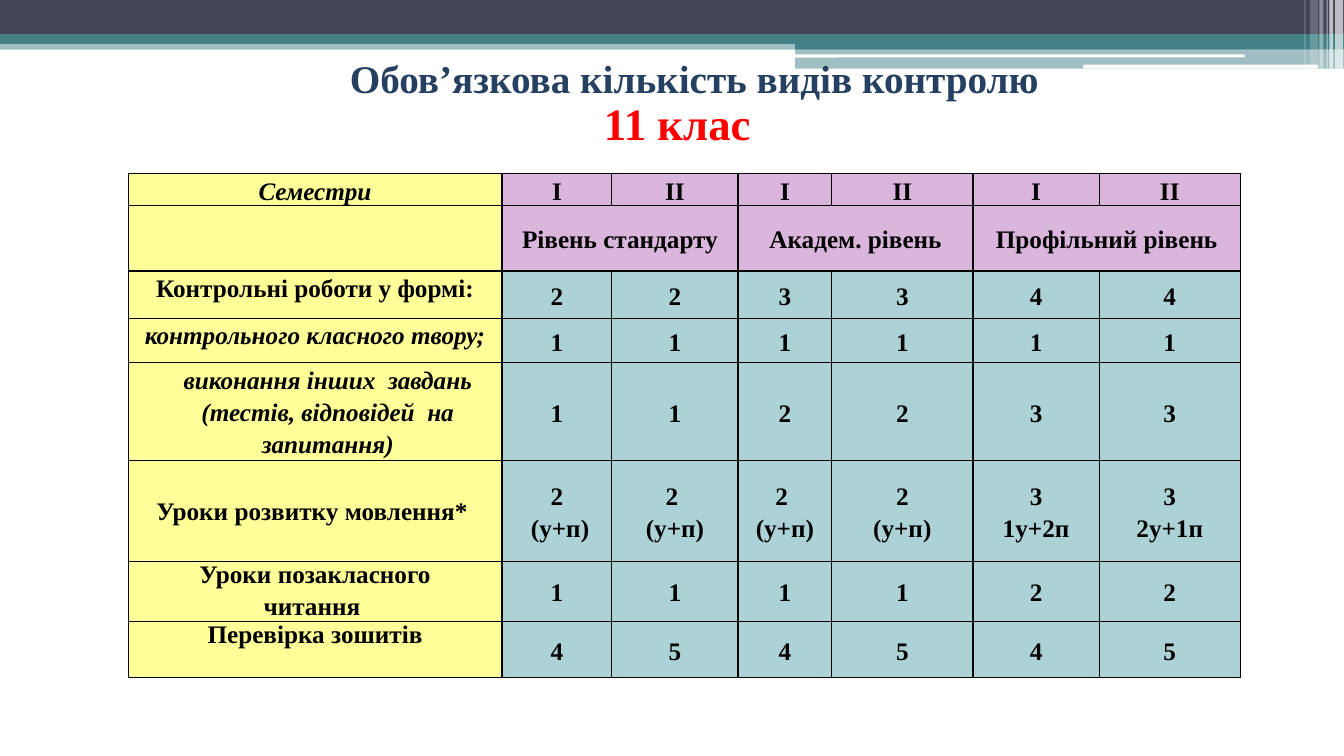
"""Slide with the required number of assessments for the 11th grade."""
from lxml.etree import SubElement
from pptx import Presentation
from pptx.dml.color import RGBColor as RGB
from pptx.enum.shapes import MSO_SHAPE as SHAPE
from pptx.enum.text import MSO_ANCHOR as ANCHOR, PP_ALIGN as ALIGN
from pptx.oxml.ns import qn
from pptx.util import Cm, Pt

COLORS = {
    "dark": "424456", "teal": "438086", "white": "FFFFFF", "black": "000000",
    "yellow": "FFFF99", "pink": "DBB6DC", "blue": "ADD2D6",
    "navy": "254061", "red": "FF0000",
}
FONT = "Times New Roman"

BARS = [
    (SHAPE.RECTANGLE, 0, 1.02, 33.87, 0.23, "teal", 50),
    (SHAPE.RECTANGLE, 0, 0, 33.87, 0.86, "dark", 100),
    (SHAPE.RECTANGLE, 0, 0.86, 33.87, 0.25, "teal", 100),
    (SHAPE.RECTANGLE, 20.04, 0.99, 13.83, 0.25, "teal", 100),
    (SHAPE.RECTANGLE, 20.04, 1.22, 13.83, 0.51, "teal", 50),
    (SHAPE.ROUNDED_RECTANGLE, 20.02, 1.37, 11.35, 0.08, "white", 100),
    (SHAPE.ROUNDED_RECTANGLE, 27.3, 1.63, 5.92, 0.1, "white", 100),
]
STRIPES = [
    (33.65, 0.2, 1.73, 65), (33.5, 0.1, 1.73, 65), (33.43, 0.03, 1.73, 60),
    (33.25, 0.1, 1.73, 40), (33.02, 0.2, 1.63, 20), (32.87, 0.03, 1.63, 30),
]
TITLES = [
    ("11 клас", (13.69, 2.29, 5.51, 1.63), 32, "red", False),
    ("Обов’язкова кількість видів контролю", (2.01, 1.24, 29.72, 1.45), 28, "navy", True),
]
TITLE_INDENT = 1.25

TABLE_AT = (3.23, 4.37)
COLS = [9.42, 2.77, 3.18, 2.36, 3.56, 3.18, 3.56]
ROWS = [0.79, 1.65, 1.19, 1.12, 2.46, 2.54, 1.52, 1.42]
CELLS = [
    ["Семестри"] + ["І", "ІІ"] * 3,
    ["", "Рівень стандарту", None, "Академ. рівень", None, "Профільний рівень", None],
    ["Контрольні роботи у формі:", "2", "2", "3", "3", "4", "4"],
    ["контрольного класного твору;"] + ["1"] * 6,
    ["виконання інших  завдань (тестів, відповідей  на запитання)",
     "1", "1", "2", "2", "3", "3"],
    ["Уроки розвитку мовлення* ", "2\n (у+п)", "2 \n(у+п)", "2 \n(у+п)",
     "2\n(у+п)", "3\n1у+2п", "3\n2у+1п"],
    ["Уроки позакласного\nчитання ", "1", "1", "1", "1", "2", "2"],
    ["Перевірка зошитів"] + ["4", "5"] * 3,
]
HEADER_ROWS = 2
ITALIC_ROWS = {0, 3, 4}
MIDDLE_LABEL_ROW = 5
LABEL_SPACING = {5: [1.07], 6: [1.0, 1.15], 7: [1.0]}
LABEL_AFTER = {3: 10, 4: 10}
LABEL_MARGIN = {4: 0.64}


def apply(obj, **values):
    for name, value in values.items():
        setattr(obj, name, value)


def rgb(name):
    return RGB.from_string(COLORS[name])


def paint(fill, color):
    fill.solid()
    fill.fore_color.rgb = rgb(color)


def style_font(font, size, color, italic=False):
    apply(font, name=FONT, size=Pt(size), bold=True, italic=italic)
    font.color.rgb = rgb(color)


def indent(p, margin, first):
    pPr = p._p.get_or_add_pPr()
    pPr.set("marL", str(Cm(margin)))
    pPr.set("indent", str(Cm(first)))


def add_bar(slide, kind, x, y, w, h, color, opacity):
    s = slide.shapes.add_shape(kind, Cm(x), Cm(y), Cm(w), Cm(h))
    s.shadow.inherit = False
    s.line.fill.background()
    paint(s.fill, color)
    if opacity < 100:
        clr = next(s._element.spPr.iter(qn("a:srgbClr")))
        SubElement(clr, qn("a:alpha"), val=str(opacity * 1000))


def add_title(slide, text, box, size, color, wrap):
    tf = slide.shapes.add_textbox(*map(Cm, box)).text_frame
    tf.word_wrap = wrap
    p = tf.paragraphs[0]
    p.alignment = ALIGN.CENTER
    indent(p, 0, TITLE_INDENT)
    r = p.add_run()
    r.text = text
    style_font(r.font, size, color)


def add_borders(cell):
    tcPr = cell._tc.get_or_add_tcPr()
    for side in ("lnL", "lnR", "lnT", "lnB"):
        ln = SubElement(tcPr, qn(f"a:{side}"), w=str(Pt(1)))
        fill = SubElement(ln, qn("a:solidFill"))
        SubElement(fill, qn("a:srgbClr"), val=COLORS["black"])


def fill_cell(cell, text, row, col):
    label = col == 0
    top = row == 0 or label and row != MIDDLE_LABEL_ROW
    add_borders(cell)
    paint(cell.fill, "yellow" if label else "pink" if row < HEADER_ROWS else "blue")
    apply(cell, margin_left=Cm(0.18), margin_right=Cm(0.18), margin_top=0,
          margin_bottom=0, vertical_anchor=ANCHOR.TOP if top else ANCHOR.MIDDLE)
    if not text:
        return
    cell.text = text
    spacing = LABEL_SPACING.get(row, [1.15]) if label else [1.15, 1.15]
    for p, lines in zip(cell.text_frame.paragraphs, spacing):
        apply(p, alignment=ALIGN.CENTER, line_spacing=lines)
        if label and row in LABEL_AFTER:
            p.space_after = Pt(LABEL_AFTER[row])
        if label and row in LABEL_MARGIN:
            indent(p, LABEL_MARGIN[row], 0)
        for r in p.runs:
            style_font(r.font, 18, "black", label and row in ITALIC_ROWS)


def add_grid(slide):
    frame = slide.shapes.add_table(len(ROWS), len(COLS), *map(Cm, TABLE_AT),
                                   Cm(sum(COLS)), Cm(sum(ROWS)))
    table = frame.table
    apply(table, first_row=False, horz_banding=False)
    for column, width in zip(table.columns, COLS):
        column.width = Cm(width)
    for line, height in zip(table.rows, ROWS):
        line.height = Cm(height)
    for row, texts in enumerate(CELLS):
        for col, text in enumerate(texts):
            fill_cell(table.cell(row, col), text, row, col)
            if text is None:
                table.cell(row, col - 1).merge(table.cell(row, col))


def main():
    prs = Presentation()
    apply(prs, slide_width=Cm(33.87), slide_height=Cm(19.05))
    slide = prs.slides.add_slide(prs.slide_layouts[6])
    for bar in BARS:
        add_bar(slide, *bar)
    for x, w, h, opacity in STRIPES:
        add_bar(slide, SHAPE.RECTANGLE, x, 0, w, h, "white", opacity)
    add_grid(slide)
    for title in TITLES:
        add_title(slide, *title)
    prs.save("out.pptx")


if __name__ == "__main__":
    main()
